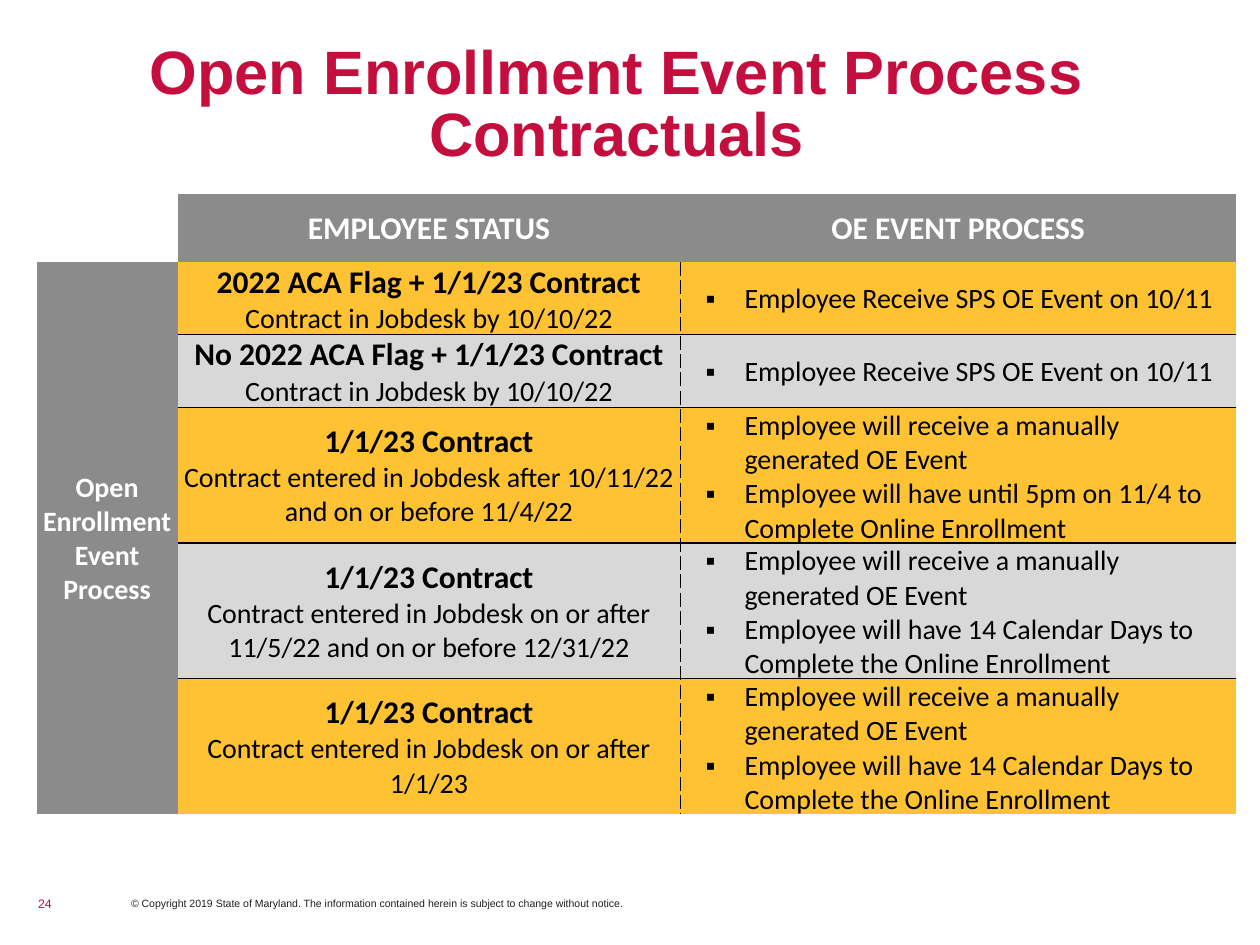
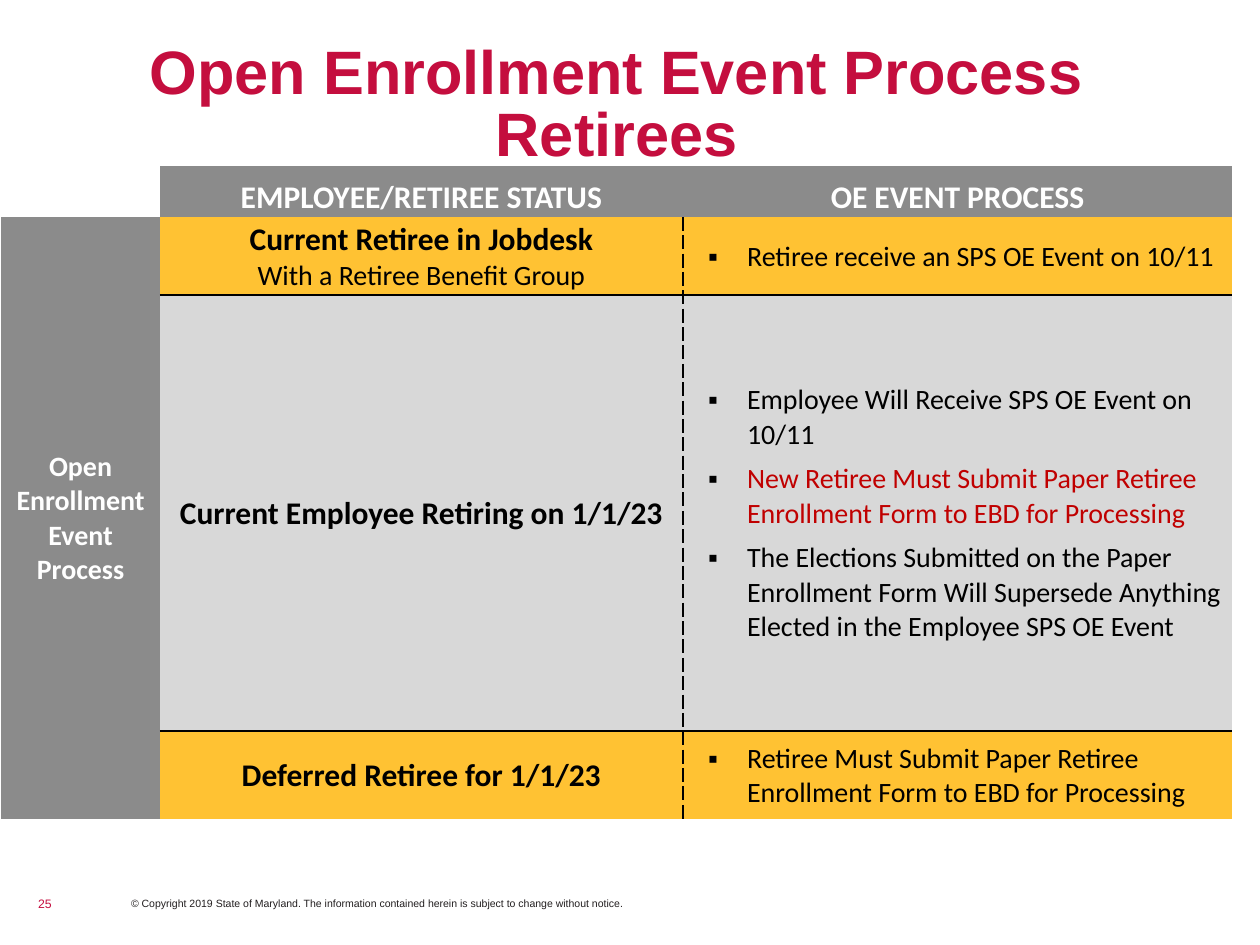
import pptx
import pptx.dml.color
import pptx.enum.text
import pptx.oxml.ns
import pptx.util
from lxml import etree

Inches = pptx.util.Inches
Pt = pptx.util.Pt
ALIGN = pptx.enum.text.PP_ALIGN
ANCHOR = pptx.enum.text.MSO_ANCHOR

CRIMSON, INK, BLACK, WHITE = "C40E3E", "231F20", "000000", "FFFFFF"
GRAY, GOLD, SILVER, ALERT = "8B8B8B", "FFC233", "D8D8D8", "C00000"
NO_GRID_STYLE = "{2D5ABB26-0587-4C30-8999-92F81FD0307C}"
COPYRIGHT = ("© Copyright 2019 State of Maryland. The information contained "
             "herein is subject to change without notice.")
MANUAL_EVENT = "Employee will receive a manually generated OE Event"
FOURTEEN_DAYS = "Employee will have 14 Calendar Days to Complete the Online Enrollment"
SPS_EVENT = "Employee Receive SPS OE Event on 10/11"

CONTRACTUALS = [
    ("2022 ACA Flag + 1/1/23 Contract", "Contract in Jobdesk by 10/10/22",
     [SPS_EVENT]),
    ("No 2022 ACA Flag + 1/1/23 Contract", "Contract in Jobdesk by 10/10/22",
     [SPS_EVENT]),
    ("1/1/23 Contract",
     "Contract entered in Jobdesk after 10/11/22 and on or before 11/4/22",
     [MANUAL_EVENT,
      "Employee will have until 5pm on 11/4 to Complete Online Enrollment"]),
    ("1/1/23 Contract",
     "Contract entered in Jobdesk on or after 11/5/22 and on or before 12/31/22",
     [MANUAL_EVENT, FOURTEEN_DAYS]),
    ("1/1/23 Contract", "Contract entered in Jobdesk on or after 1/1/23",
     [MANUAL_EVENT, FOURTEEN_DAYS]),
]
RETIREES = [
    ("Current Retiree in Jobdesk", "With a Retiree Benefit Group",
     ["Retiree receive an SPS OE Event on 10/11"]),
    ("Current Employee Retiring on 1/1/23", "",
     ["Employee Will Receive SPS OE Event on 10/11",
      "New Retiree Must Submit Paper Retiree Enrollment Form to EBD for Processing",
      "The Elections Submitted on the Paper Enrollment Form Will Supersede "
      "Anything Elected in the Employee SPS OE Event"]),
    ("Deferred Retiree for 1/1/23", "",
     ["Retiree Must Submit Paper Retiree Enrollment Form to EBD for Processing"]),
]


def rgb(color):
    """Turn a hex string into a colour."""
    return pptx.dml.color.RGBColor.from_string(color)


def add_element(parent, tag, **attrs):
    """Append a DrawingML element to a parent."""
    return etree.SubElement(parent, pptx.oxml.ns.qn(tag), **attrs)


def set_font(font, size, color, bold=False, name="Calibri"):
    """Set the face, size, colour and weight of a font."""
    font.name, font.size, font.bold = name, Pt(size), bold
    font.color.rgb = rgb(color)


def add_text(s, box, text, size, color, align, anchor, bold=False):
    """Add a text box without margins and return its paragraph."""
    tf = s.shapes.add_textbox(*map(Inches, box)).text_frame
    tf.word_wrap = True
    tf.margin_left = tf.margin_right = tf.margin_top = tf.margin_bottom = 0
    tf.vertical_anchor = anchor
    p = tf.paragraphs[0]
    p.text, p.alignment = text, align
    set_font(p.font, size, color, bold, "Arial")
    return p


def add_frame(s, title, number):
    """Add the title, page number and copyright line."""
    p = add_text(s, (0.29, 0.35, 9.21, 0.52), title, 35, CRIMSON,
                 ALIGN.CENTER, ANCHOR.TOP, True)
    p.line_spacing = 0.85
    add_text(s, (0.29, 7.11, 0.12, 0.12), str(number), 7, CRIMSON,
             ALIGN.RIGHT, ANCHOR.MIDDLE)
    add_text(s, (1.04, 7.12, 3.96, 0.1), COPYRIGHT, 6, INK,
             ALIGN.LEFT, ANCHOR.MIDDLE)


def style_cell(cell, fill, borders="", anchor=ANCHOR.MIDDLE):
    """Set margins, borders and fill; side borders are dashed."""
    cell.margin_left = cell.margin_right = cell.margin_top = Inches(0.01)
    cell.margin_bottom = 0
    cell.vertical_anchor = anchor
    tc_pr = cell._tc.get_or_add_tcPr()
    for side in borders:
        ln = add_element(tc_pr, f"a:ln{side}", w=str(Pt(1)))
        add_element(add_element(ln, "a:solidFill"), "a:srgbClr", val=BLACK)
        add_element(ln, "a:prstDash", val="dash" if side in "LR" else "solid")
    cell.fill.solid()
    cell.fill.fore_color.rgb = rgb(fill)


def write_label(cell, text, size):
    """Write a white bold label in a gray cell."""
    p = cell.text_frame.paragraphs[0]
    p.text, p.alignment = text, ALIGN.CENTER
    set_font(p.font, size, WHITE, True)


def write_status(cell, heading, detail):
    """Write a bold heading with an optional detail below it."""
    p = cell.text_frame.paragraphs[0]
    p.alignment = ALIGN.CENTER
    r = p.add_run()
    r.text = heading
    set_font(r.font, 18, BLACK, True)
    if detail:
        p.add_line_break()
        r = p.add_run()
        r.text = detail
        set_font(r.font, 16, BLACK)


def write_steps(cell, steps):
    """Write square-bulleted steps, spaced when there are more than two."""
    tf = cell.text_frame
    for i, step in enumerate(steps):
        p = tf.add_paragraph() if i else tf.paragraphs[0]
        p.text = step
        p_pr = p._p.get_or_add_pPr()
        p_pr.set("marL", str(Inches(0.5)))
        p_pr.set("indent", str(Inches(-0.31)))
        add_element(add_element(p_pr, "a:buClr"), "a:srgbClr", val=BLACK)
        add_element(p_pr, "a:buFont", typeface="Arial")
        add_element(p_pr, "a:buChar", char="▪")
        if len(steps) > 2:
            p.space_after = Pt(6)
        set_font(p.font, 16, ALERT if step.startswith("New Retiree") else BLACK)


def add_process_table(s, left, top, widths, heights, status_title, rows, header_anchor):
    """Add the table of statuses and their event process."""
    table = s.shapes.add_table(len(heights), len(widths), Inches(left), Inches(top),
                               Inches(sum(widths)), Inches(sum(heights))).table
    table.first_row = table.horz_banding = False
    table._tbl.tblPr[0].text = NO_GRID_STYLE
    for column, width in zip(table.columns, widths):
        column.width = Inches(width)
    for row, height in zip(table.rows, heights):
        row.height = Inches(height)
    for col, title in enumerate((status_title, "OE EVENT PROCESS"), 1):
        style_cell(table.cell(0, col), GRAY, anchor=header_anchor)
        write_label(table.cell(0, col), title, 18)
    side = table.cell(1, 0)
    side.merge(table.cell(len(rows), 0))
    style_cell(side, GRAY)
    write_label(side, "Open Enrollment Event Process", 16)
    for i, (heading, detail, steps) in enumerate(rows, 1):
        status, process = table.cell(i, 1), table.cell(i, 2)
        rules = ("T" if i > 1 else "") + ("B" if i < len(rows) else "")
        fill = GOLD if i % 2 else SILVER
        style_cell(status, fill, "R" + rules)
        style_cell(process, fill, "L" + rules)
        write_status(status, heading, detail)
        write_steps(process, steps)


def main():
    """Build the two slides and save them."""
    prs = pptx.Presentation()
    prs.slide_width, prs.slide_height = Inches(10), Inches(7.5)
    slides = [
        ("Contractuals", 0.29, 1.54, (1.12, 3.99, 4.41),
         [0.54] * 3 + [1.02] * 3, "EMPLOYEE STATUS", CONTRACTUALS, ANCHOR.MIDDLE),
        ("Retirees", 0.01, 1.32, (1.26, 4.15, 4.36),
         [0.33, 0.62, 3.46, 0.7], "EMPLOYEE/RETIREE STATUS", RETIREES, ANCHOR.BOTTOM),
    ]
    for number, (group, *table) in enumerate(slides, 24):
        s = prs.slides.add_slide(prs.slide_layouts[6])
        add_frame(s, f"Open Enrollment Event Process {group}", number)
        add_process_table(s, *table)
    prs.save("out.pptx")


if __name__ == "__main__":
    main()
